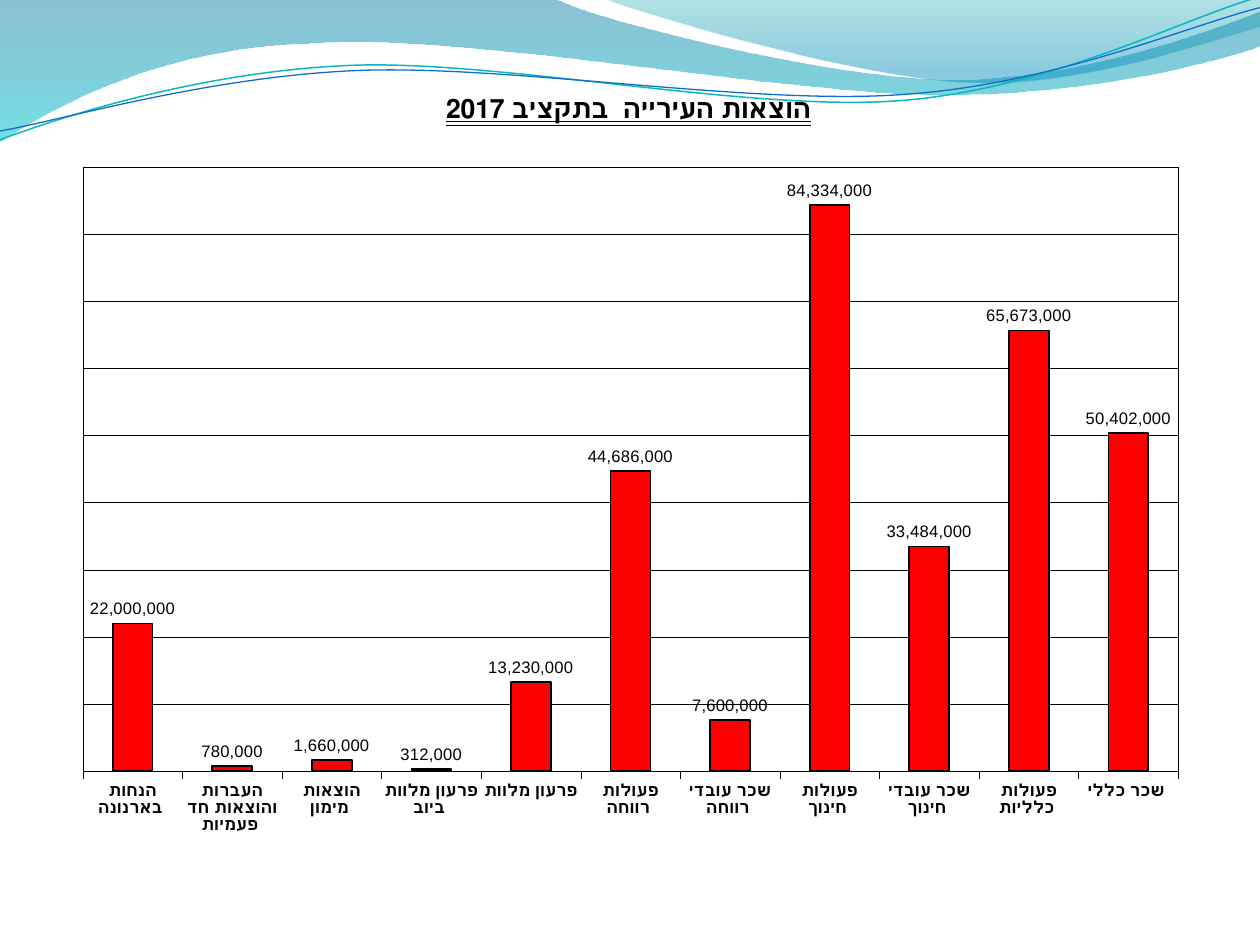
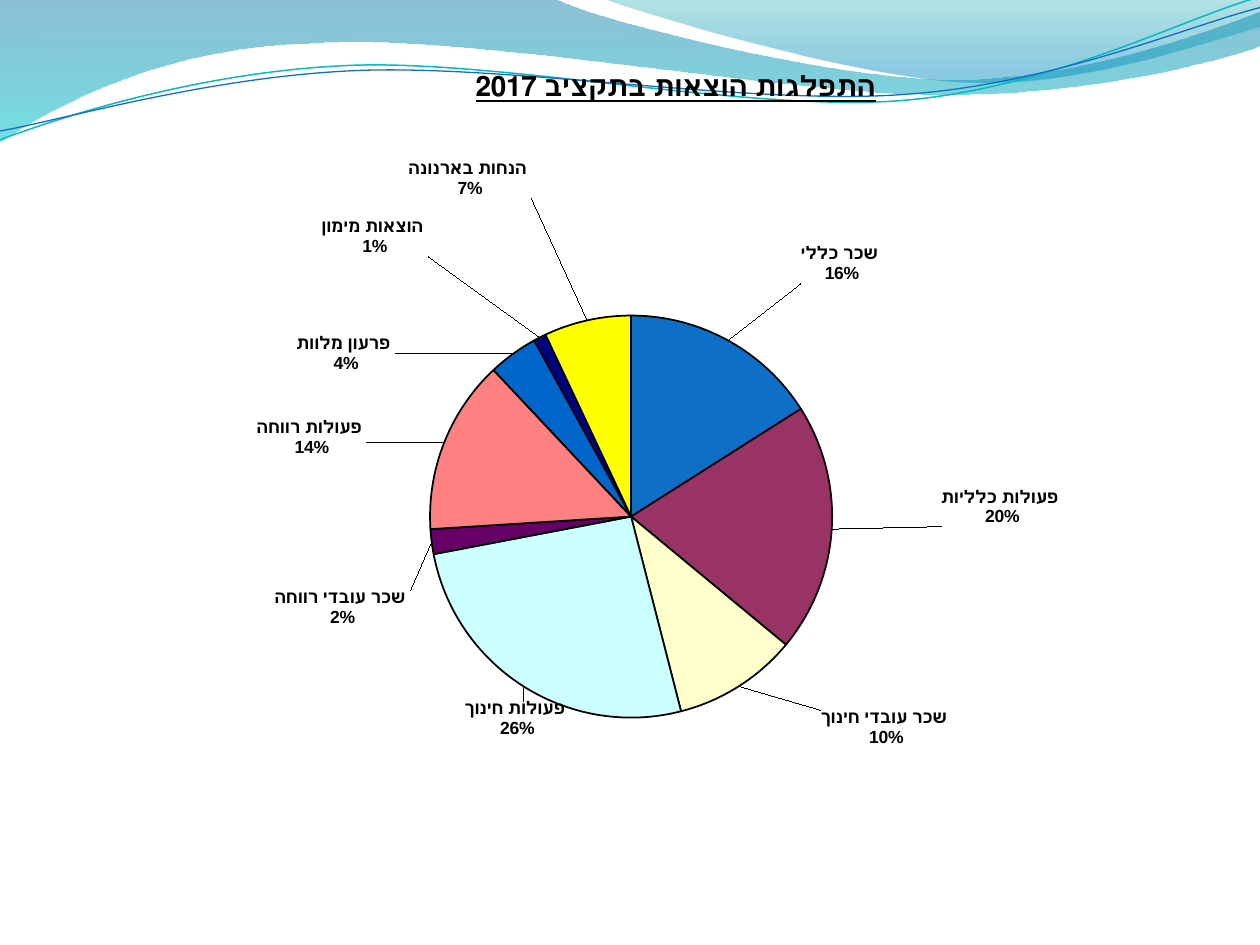
from copy import deepcopy
from dataclasses import dataclass
from math import cos, radians, sin

from lxml import etree
from pptx import Presentation
from pptx.chart.data import CategoryChartData
from pptx.dml.color import RGBColor
from pptx.enum.chart import XL_CHART_TYPE, XL_LABEL_POSITION, XL_TICK_LABEL_POSITION, XL_TICK_MARK
from pptx.enum.text import MSO_UNDERLINE
from pptx.oxml.ns import qn
from pptx.util import Inches, Pt

COLUMN, PIE = XL_CHART_TYPE.COLUMN_CLUSTERED, XL_CHART_TYPE.PIE
OUTSIDE = XL_LABEL_POSITION.OUTSIDE_END
LABELS_LOW = XL_TICK_LABEL_POSITION.LOW
TICK_OUT, TICK_NONE = XL_TICK_MARK.OUTSIDE, XL_TICK_MARK.NONE
SINGLE, DOUBLE = MSO_UNDERLINE.SINGLE_LINE, MSO_UNDERLINE.DOUBLE_LINE
AMOUNT_FORMAT = '_ * #,##0_ ;_ * \\-#,##0_ ;_ * "-"??_ ;_ '


@dataclass(frozen=True)
class Theme:
    font: str = "Arial"
    ink: str = "000000"
    bar: str = "FF0000"
    slices: tuple = ("0F6FC6", "993366", "FFFFCC", "CCFFFF", "660066", "FF8080",
                     "0066CC", "CCCCFF", "000080", "FF00FF", "FFFF00")
    bar_title: float = 15.2
    pie_title: float = 16
    bar_text: float = 9.5
    pie_text: float = 10
    hairline: float = 0.25
    outline: float = 1


EXPENSES = {
    "שכר כללי ": 50402000,
    "פעולות כלליות ": 65673000,
    "שכר עובדי חינוך ": 33484000,
    "פעולות חינוך ": 84334000,
    "שכר עובדי רווחה ": 7600000,
    "פעולות רווחה ": 44686000,
    "פרעון מלוות ": 13230000,
    "פרעון מלוות ביוב ": 312000,
    "הוצאות מימון ": 1660000,
    "העברות והוצאות חד פעמיות ": 780000,
    "הנחות בארנונה ": 22000000,
}
# Inches each pie label moves from the rim of its slice; None hides it.
LABEL_SHIFTS = [(0.55, -0.4), (0.81, -0.17), (0.62, 0.14), (0.4, 0.07), (-0.11, 0.38),
                (-0.56, 0.14), (-0.9, 0.2), (-0.56, 0.02), (-0.86, -0.59), None,
                (-0.43, -0.91)]

# Each wave: box, outline as it lies on the slide, then its paint. An outline is a
# start point followed by straight (2 numbers) or Bezier (6 numbers) steps.
# Gradient stops: position, colour, opacity in percent.
WAVE_BANDS = [
    ((-0.01, -0.01, 10.02, 1.14),
     [(0, 0), (4.4, -0.01), (4.76, 0.17, 6.64, 0.63, 7.58, 0.63),
      (8.53, 0.63, 9.58, 0.26, 10, 0.09), (10.01, 0.36),
      (9.83, 0.44, 8.7, 0.76, 7.46, 0.75), (6.22, 0.75, 3.82, 0.28, 2.57, 0.34),
      (1.29, 0.36, 0.46, 0.83, -0.01, 1.13), (0, 0)],
     [(0, "0074A1", 45), (1, "00C6CF", 55)]),
    ((4.79, -0.01, 5.21, 0.7),
     [(4.79, -0.01), (5.09, 0.11, 6.82, 0.62, 7.69, 0.65),
      (8.56, 0.69, 9.61, 0.32, 10, 0.21), (10, 0), (4.79, -0.01)],
     [(0, "00A1A9", 30), (0.8, "008BBF", 45)]),
]
WAVE_LINES = [
    ((-0.02, 0.22, 10.02, 0.71),
     [(0, 1.11), (0.48, 0.93, 1.58, 0.57, 2.77, 0.52), (3.95, 0.47, 5.93, 0.89, 7.13, 0.8),
      (8.33, 0.71, 9.38, 0.15, 9.98, -0.02)], "0AB8BF", 0.85),
    ((-0.02, 0.3, 10.03, 0.58),
     [(0, 1.04), (0.47, 0.96, 1.64, 0.61, 2.83, 0.56), (4.03, 0.51, 5.97, 0.84, 7.17, 0.75),
      (8.36, 0.67, 9.41, 0.21, 10, 0.06)], "0F6FC6", 0.75),
]
WAVE_TILT = 357.3


def rgb(color):
    return RGBColor.from_string(color)


def set_line(line, color, width):
    line.color.rgb = rgb(color)
    line.width = Pt(width)


def format_font(font, name, size, color, bold=False, underline=None):
    font.name, font.size, font.bold = name, Pt(size), bold
    font.color.rgb = rgb(color)
    if underline is not None:
        font.underline = underline


def write(tf, text, **fmt):
    r = tf.paragraphs[0].add_run()
    r.text = text
    format_font(r.font, **fmt)


def add_xml(parent, tag, **attrs):
    return etree.SubElement(parent, qn(tag), {k: str(v) for k, v in attrs.items()})


def place(parent, index, inner=False, edge=True, **fractions):
    """Give a chart part a manual layout in fractions of the chart."""
    for old in parent.findall(qn("c:layout")):
        parent.remove(old)
    layout = etree.Element(qn("c:layout"))
    manual = add_xml(layout, "c:manualLayout")
    if inner:
        add_xml(manual, "c:layoutTarget", val="inner")
    if edge:
        for mode in ("c:xMode", "c:yMode"):
            add_xml(manual, mode, val="edge")
    for key, value in fractions.items():
        add_xml(manual, f"c:{key}", val=round(value, 4))
    parent.insert(index, layout)


def local_points(step, box, tilt):
    """Points of a step measured from the corner of its box before the box is tilted."""
    left, top, width, height = box
    angle = radians(-tilt)
    for x, y in zip(step[::2], step[1::2]):
        dx, dy = x - left - width / 2, y - top - height / 2
        yield (Inches(dx * cos(angle) - dy * sin(angle) + width / 2),
               Inches(dx * sin(angle) + dy * cos(angle) + height / 2))


class Deck:
    def __init__(self, theme):
        self.theme = theme
        self.prs = Presentation()
        self.prs.slide_width, self.prs.slide_height = Inches(10), Inches(7.5)
        self.s = None

    def new_slide(self):
        self.s = self.prs.slides.add_slide(self.prs.slide_layouts[6])
        for band in WAVE_BANDS:
            self.band(*band)
        for curve in WAVE_LINES:
            self.curve(*curve)

    def freeform(self, box, steps, tilt=0, close=False):
        """Build the outline from its corner points, then bend the Bezier steps."""
        groups = [list(local_points(step, box, tilt)) for step in steps]
        builder = self.s.shapes.build_freeform(*groups[0][-1])
        builder.add_line_segments([group[-1] for group in groups[1:]], close=close)
        sp = builder.convert_to_shape()
        sp.left, sp.top, sp.width, sp.height = map(Inches, box)
        sp.rotation = tilt
        sp.shadow.inherit = False

        outline = next(sp._element.iter(qn("a:path")))
        outline.set("w", str(sp.width))
        outline.set("h", str(sp.height))
        for node, group in zip(list(outline), groups):
            if len(group) == 3:
                node_tag = "a:cubicBezTo"
            else:
                node_tag = "a:lnTo" if node.tag == qn("a:lnTo") else "a:moveTo"
            segment = etree.Element(qn(node_tag))
            for x, y in group:
                add_xml(segment, "a:pt", x=x, y=y)
            outline.replace(node, segment)
        return sp

    def band(self, box, steps, stops):
        sp = self.freeform(box, steps, close=True)
        sp.line.fill.background()
        sp.fill.gradient()
        sp.fill.gradient_angle = 270
        for stop, (position, color, _) in zip(sp.fill.gradient_stops, stops):
            stop.position = position
            stop.color.rgb = rgb(color)
        for node, (_, _, opacity) in zip(sp._element.spPr.iter(qn("a:srgbClr")), stops):
            add_xml(node, "a:alpha", val=opacity * 1000)

    def curve(self, box, steps, color, width):
        sp = self.freeform(box, steps, tilt=WAVE_TILT)
        sp.fill.background()
        set_line(sp.line, color, width)

    def font(self, size, **more):
        return {"name": self.theme.font, "size": size, "color": self.theme.ink, **more}

    def chart(self, kind, box, data, size, title, title_at, title_font, plot_at):
        chart_data = CategoryChartData()
        chart_data.categories = list(data)
        chart_data.add_series("Series 1", list(data.values()))
        chart = self.s.shapes.add_chart(kind, *map(Inches, box), chart_data).chart
        chart.has_legend = False
        format_font(chart.font, **self.font(size))
        chart.has_title = True
        write(chart.chart_title.text_frame, title, **title_font)
        place(chart.chart_title._element, 1, **dict(zip("xy", title_at)))
        plot_area = chart._chartSpace.chart.plotArea
        place(plot_area, 0, inner=True, **dict(zip("xywh", plot_at)))
        return chart

    def column_chart(self, box, data, **layout):
        th = self.theme
        chart = self.chart(COLUMN, box, data, th.bar_text, **layout)
        plot = chart.plots[0]
        plot.gap_width, plot.vary_by_categories = 150, False

        cat = chart.category_axis
        cat.reverse_order = True
        cat.major_tick_mark, cat.minor_tick_mark = TICK_OUT, TICK_NONE
        cat.tick_label_position = LABELS_LOW
        format_font(cat.tick_labels.font, **self.font(th.bar_text, bold=True))
        set_line(cat.format.line, th.ink, th.hairline)

        val = chart.value_axis
        val.minimum_scale, val.maximum_scale, val.major_unit = 0, 90000000, 10000000
        val.tick_labels.number_format = AMOUNT_FORMAT
        val.tick_labels.number_format_is_linked = False
        set_line(val.major_gridlines.format.line, th.ink, th.hairline)
        val.visible = False

        series = plot.series[0]
        series.format.fill.solid()
        series.format.fill.fore_color.rgb = rgb(th.bar)
        set_line(series.format.line, th.ink, th.outline)
        labels = series.data_labels
        labels.show_value, labels.position = True, OUTSIDE
        labels.number_format, labels.number_format_is_linked = AMOUNT_FORMAT, False
        format_font(labels.font, **self.font(th.bar_text))

        border = add_xml(chart._chartSpace.chart.plotArea, "c:spPr")
        add_xml(border, "a:noFill")
        line = add_xml(border, "a:ln", w=Pt(th.hairline))
        add_xml(add_xml(line, "a:solidFill"), "a:srgbClr", val=th.ink)

    def pie_chart(self, box, data, shifts, **layout):
        th = self.theme
        chart = self.chart(PIE, box, data, th.pie_text, **layout)
        plot = chart.plots[0]
        plot.vary_by_categories = True
        series = plot.series[0]
        set_line(series.format.line, th.ink, th.outline)
        for i, color in enumerate(th.slices):
            fmt = series.points[i].format
            fmt.fill.solid()
            fmt.fill.fore_color.rgb = rgb(color)
            set_line(fmt.line, th.ink, th.outline)

        labels = series.data_labels
        labels.show_value = False
        labels.show_category_name = labels.show_percentage = True
        labels.number_format, labels.number_format_is_linked = "0%", False
        labels.position = OUTSIDE
        format_font(labels.font, **self.font(th.pie_text, bold=True))
        self.shift_labels(labels._element, shifts, box[2:])

    def shift_labels(self, group, shifts, chart_size):
        """Move each label by its shift, sharing the format of the whole group."""
        separator = etree.Element(qn("c:separator"))
        separator.text = "\n"
        group.find(qn("c:showBubbleSize")).addnext(separator)
        shared = [el for el in group if el.tag != qn("c:showLeaderLines")]
        width, height = chart_size
        for i, shift in enumerate(shifts):
            label = etree.Element(qn("c:dLbl"))
            add_xml(label, "c:idx", val=i)
            if shift is None:
                add_xml(label, "c:delete", val=1)
            else:
                place(label, 1, edge=False, x=shift[0] / width, y=shift[1] / height)
                label.extend(deepcopy(shared))
            group.insert(i, label)


def main():
    theme = Theme()
    deck = Deck(theme)

    deck.new_slide()
    deck.column_chart(
        (0.56, 0.58, 8.89, 6.34), EXPENSES,
        title="הוצאות העירייה  בתקציב 2017", title_at=(0.331, 0.021),
        title_font=deck.font(theme.bar_title, bold=True, underline=DOUBLE),
        plot_at=(0.011, 0.118, 0.978, 0.756))

    total = sum(EXPENSES.values())
    shares = {name: round(100 * amount / total) for name, amount in EXPENSES.items()}
    deck.new_slide()
    deck.pie_chart(
        (0.56, 0.38, 8.89, 6.74), shares, LABEL_SHIFTS,
        title="התפלגות הוצאות בתקציב 2017", title_at=(0.357, 0.021),
        title_font=deck.font(theme.pie_title, bold=True, underline=SINGLE),
        plot_at=(0.321, 0.258, 0.359, 0.588))

    deck.prs.save("out.pptx")


if __name__ == "__main__":
    main()
